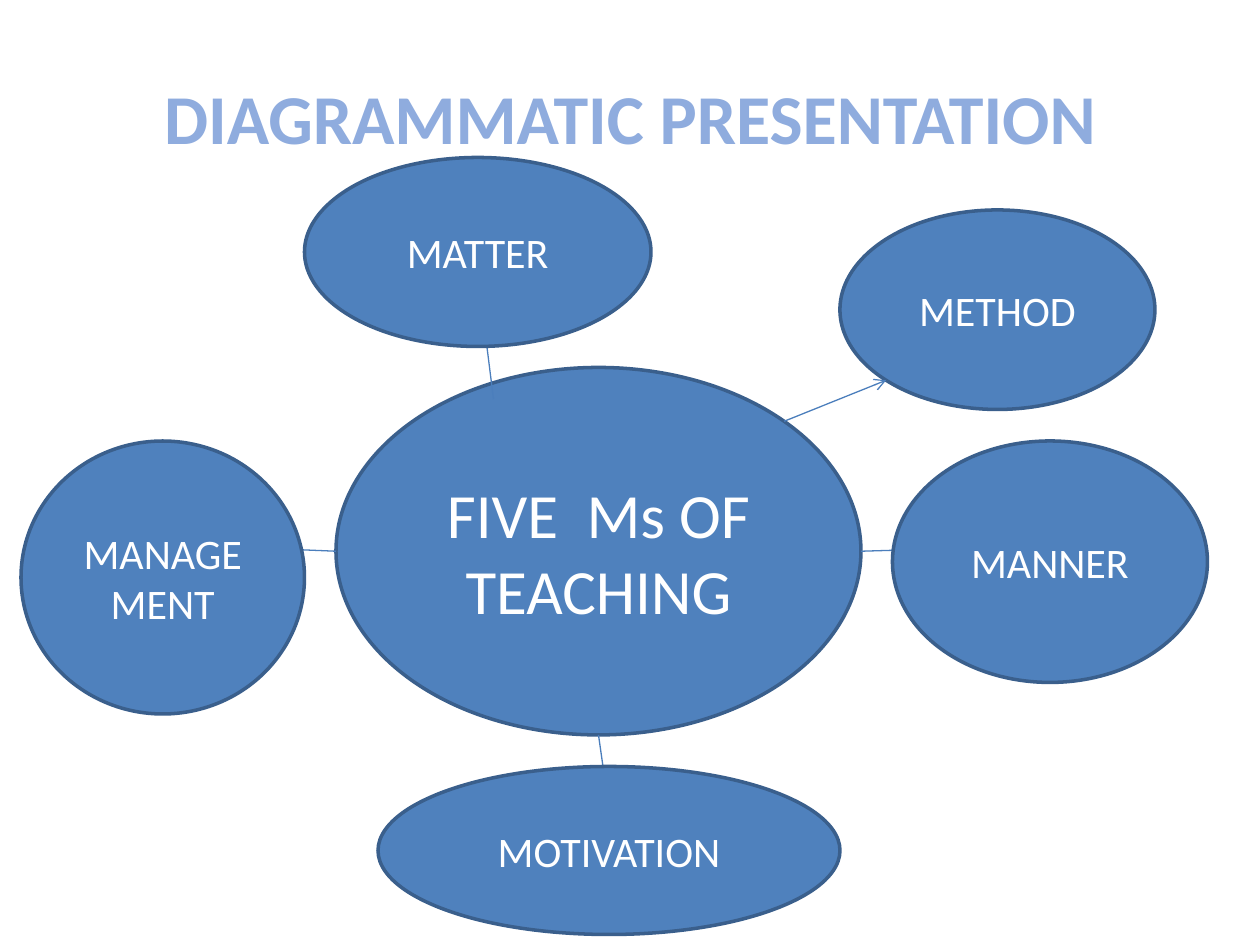
from math import sqrt

from lxml.etree import SubElement
from pptx import Presentation
from pptx.dml.color import RGBColor
from pptx.enum.shapes import MSO_CONNECTOR, MSO_SHAPE
from pptx.enum.text import MSO_ANCHOR, PP_ALIGN
from pptx.oxml.ns import qn
from pptx.util import Inches, Pt

COLORS = {"title": "8FACDE", "fill": "4F81BD", "outline": "3A5F8C",
          "arrow": "4B7EBC", "text": "FFFFFF"}
FONT = "Calibri"
TITLE = "DIAGRAMMATIC PRESENTATION"
UNITS_PER_INCH = 12

HUB = ("FIVE  Ms OF TEACHING", (32, 35, 50, 35))
TOPICS = [
    ("MATTER", (29, 15, 33, 18)),
    ("MANAGEMENT", (2, 42, 27, 26)),
    ("MANNER", (85, 42, 30, 23)),
    ("MOTIVATION", (36, 73, 44, 16)),
    ("METHOD", (80, 20, 30, 19)),
]
ARROWS_BEHIND_TOPICS = [
    ((47, 38), (46, 30)),
    ((32, 52.5), (20, 52)),
    ((82, 52.5), (99, 52)),
    ((57, 70), (58, 77)),
]


def grid(units):
    return Inches(units / UNITS_PER_INCH)


def color(name):
    return RGBColor.from_string(COLORS[name])


def write_text(shape, text, size, color_name, bold=False):
    frame = shape.text_frame
    frame.word_wrap = True
    frame.vertical_anchor = MSO_ANCHOR.MIDDLE
    frame.text = text
    paragraph = frame.paragraphs[0]
    paragraph.alignment = PP_ALIGN.CENTER
    font = paragraph.font
    font.name, font.size, font.bold = FONT, Pt(size), bold
    font.color.rgb = color(color_name)


def add_oval(slide, text, box, size):
    shape = slide.shapes.add_shape(MSO_SHAPE.OVAL, *map(grid, box))
    shape.shadow.inherit = False
    shape.fill.solid()
    shape.fill.fore_color.rgb = color("fill")
    shape.line.color.rgb = color("outline")
    shape.line.width = Pt(2)
    write_text(shape, text, size, "text")


def add_arrow(slide, start, end):
    connector = slide.shapes.add_connector(
        MSO_CONNECTOR.STRAIGHT, *map(grid, start + end))
    connector.line.color.rgb = color("arrow")
    connector.line.width = Pt(0.75)
    properties = connector._element.spPr
    SubElement(properties.find(qn("a:ln")), qn("a:tailEnd"), type="arrow")
    SubElement(properties, qn("a:effectLst"))


def diagonal_point(box, horizontal, vertical):
    left, top, width, height = box
    return (left + width / 2 * (1 + horizontal / sqrt(2)),
            top + height / 2 * (1 + vertical / sqrt(2)))


def main():
    presentation = Presentation()
    presentation.slide_width, presentation.slide_height = Inches(10), Inches(7.5)
    slide = presentation.slides.add_slide(presentation.slide_layouts[5])

    title = slide.shapes.title
    title.left, title.top = Inches(0.5), Inches(0.3)
    title.width, title.height = Inches(9), Inches(1.25)
    write_text(title, TITLE, 40, "title", bold=True)

    add_oval(slide, *HUB, 36)
    for start, end in ARROWS_BEHIND_TOPICS:
        add_arrow(slide, start, end)
    for text, box in TOPICS:
        add_oval(slide, text, box, 24)
    method_box = dict(TOPICS)["METHOD"]
    add_arrow(slide, diagonal_point(HUB[1], 1, -1), diagonal_point(method_box, -1, 1))

    presentation.save("out.pptx")


if __name__ == "__main__":
    main()
